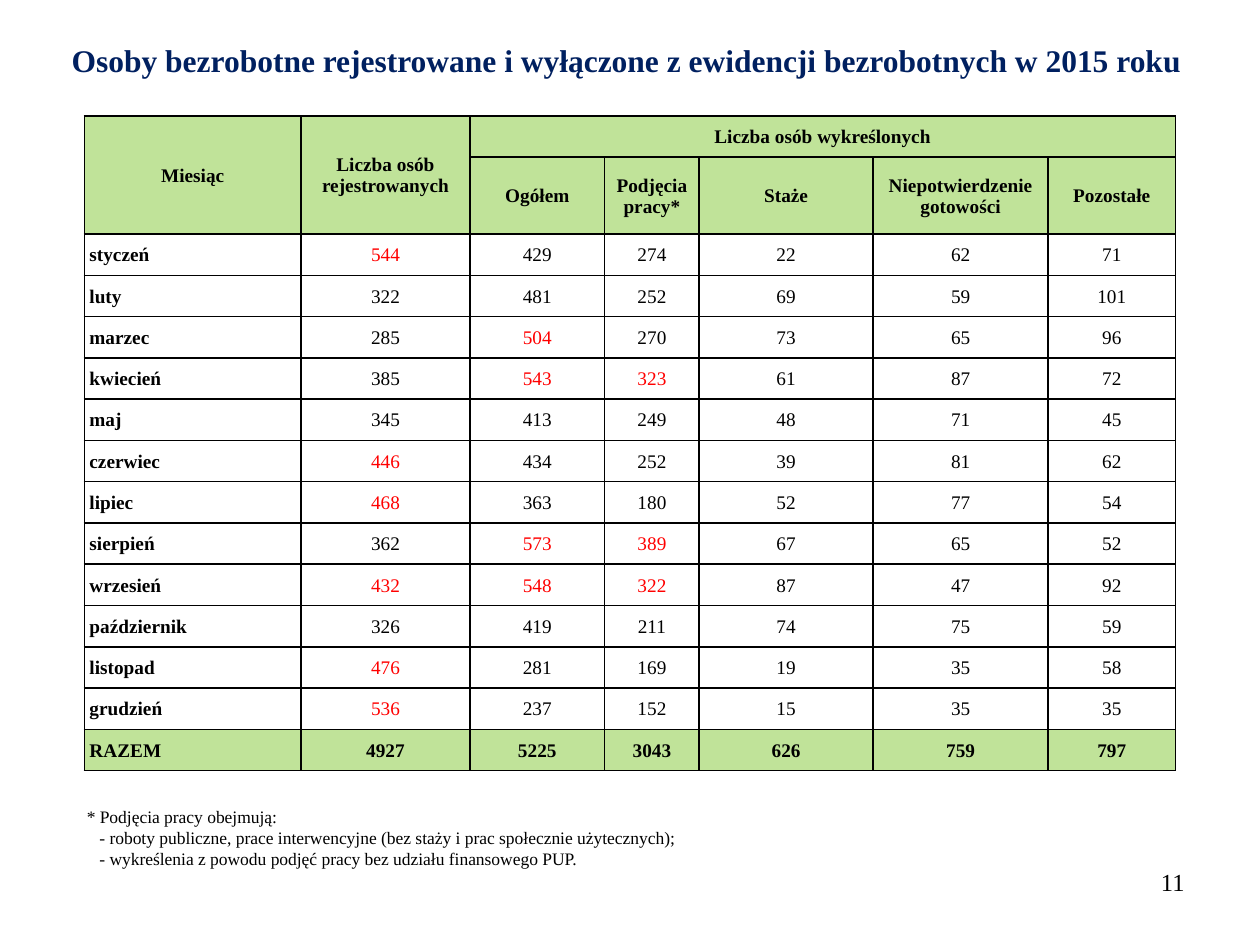
from lxml import etree
from pptx import Presentation
from pptx.dml.color import RGBColor
from pptx.enum.text import MSO_ANCHOR, PP_ALIGN
from pptx.oxml.ns import qn
from pptx.util import Inches, Pt

LEFT, CENTER, RIGHT = PP_ALIGN.LEFT, PP_ALIGN.CENTER, PP_ALIGN.RIGHT
MIDDLE = MSO_ANCHOR.MIDDLE
NAVY = RGBColor(0x00, 0x20, 0x60)
BLACK = RGBColor(0x00, 0x00, 0x00)
RED = RGBColor(0xFF, 0x00, 0x00)
GREEN = RGBColor(0xC0, 0xE3, 0x99)

GROUP_HEADER = ["Miesiąc", "Liczba osób rejestrowanych", "Liczba osób wykreślonych", "", "", "", ""]
REASON_HEADER = ["", "", "Ogółem", "Podjęcia pracy*", "Staże", "Niepotwierdzenie gotowości", "Pozostałe"]
MONTHS = [
    ["styczeń", 544, 429, 274, 22, 62, 71],
    ["luty", 322, 481, 252, 69, 59, 101],
    ["marzec", 285, 504, 270, 73, 65, 96],
    ["kwiecień", 385, 543, 323, 61, 87, 72],
    ["maj", 345, 413, 249, 48, 71, 45],
    ["czerwiec", 446, 434, 252, 39, 81, 62],
    ["lipiec", 468, 363, 180, 52, 77, 54],
    ["sierpień", 362, 573, 389, 67, 65, 52],
    ["wrzesień", 432, 548, 322, 87, 47, 92],
    ["październik", 326, 419, 211, 74, 75, 59],
    ["listopad", 476, 281, 169, 19, 35, 58],
    ["grudzień", 536, 237, 152, 15, 35, 35],
]
TOTALS = ["RAZEM", 4927, 5225, 3043, 626, 759, 797]
RED_ABOVE = {1: 400, 2: 500, 3: 300}
COLUMN_WIDTHS = [1.72, 1.34, 1.07, 0.75, 1.38, 1.39, 1.01]
TABLE_HEIGHT, REASON_HEIGHT = 5.2, 0.61


class SlideBuilder:
    """Holds the slide and its typeface, and adds text and tables to it."""

    def __init__(self, slide, font="Times New Roman"):
        self.slide = slide
        self.font = font

    def add_run(self, paragraph, text, size, color=BLACK, bold=False, align=LEFT):
        paragraph.alignment = align
        run = paragraph.add_run()
        run.text = text
        run.font.name = self.font
        run.font.size = Pt(size)
        run.font.bold = bold
        run.font.color.rgb = color

    def text(self, box, lines, size, indent=0, **style):
        frame = self.slide.shapes.add_textbox(*map(Inches, box)).text_frame
        frame.word_wrap = True
        for index, line in enumerate(lines):
            paragraph = frame.add_paragraph() if index else frame.paragraphs[0]
            self.add_run(paragraph, line, size, **style)
            if index and indent:
                paragraph._p.get_or_add_pPr().set("marL", str(Inches(indent)))

    def border(self, cell):
        properties = cell._tc.get_or_add_tcPr()
        for side in ("lnL", "lnR", "lnT", "lnB"):
            line = etree.SubElement(properties, qn(f"a:{side}"), w=str(Pt(1)))
            fill = etree.SubElement(line, qn("a:solidFill"))
            etree.SubElement(fill, qn("a:srgbClr"), val=str(BLACK))

    def cell(self, cell, value, label, shaded, color):
        self.border(cell)
        cell.margin_left = Inches(0.04 if label else 0.01)
        cell.margin_right = cell.margin_top = Inches(0.01)
        cell.margin_bottom = 0
        cell.vertical_anchor = MIDDLE
        if shaded:
            cell.fill.solid()
            cell.fill.fore_color.rgb = GREEN
        else:
            cell.fill.background()
        if value != "":
            self.add_run(cell.text_frame.paragraphs[0], str(value), 11, color,
                         bold=label or shaded, align=LEFT if label else CENTER)

    def table(self, left, top, rows):
        table = self.slide.shapes.add_table(
            len(rows), len(COLUMN_WIDTHS), Inches(left), Inches(top),
            Inches(sum(COLUMN_WIDTHS)), Inches(TABLE_HEIGHT)).table
        table.first_row = table.horz_banding = False
        for column, width in zip(table.columns, COLUMN_WIDTHS):
            column.width = Inches(width)
        regular_height = (TABLE_HEIGHT - REASON_HEIGHT) / (len(rows) - 1)
        for r, values in enumerate(rows):
            table.rows[r].height = Inches(REASON_HEIGHT if r == 1 else regular_height)
            shaded = r < 2 or r == len(rows) - 1
            for c, value in enumerate(values):
                high = not shaded and c in RED_ABOVE and value > RED_ABOVE[c]
                self.cell(table.cell(r, c), value, c == 0 and r > 1, shaded,
                          RED if high else BLACK)
        for start, end in (((0, 0), (1, 0)), ((0, 1), (1, 1)), ((0, 2), (0, 6))):
            table.cell(*start).merge(table.cell(*end))


def main():
    presentation = Presentation()
    presentation.slide_width, presentation.slide_height = Inches(10), Inches(7.5)
    builder = SlideBuilder(presentation.slides.add_slide(presentation.slide_layouts[6]))
    builder.text(
        (0.47, 0.28, 9.45, 0.4),
        ["Osoby bezrobotne rejestrowane i wyłączone z ewidencji bezrobotnych w 2015 roku"],
        18, color=NAVY, bold=True)
    builder.text(
        (0.59, 6.35, 8.35, 0.91),
        ["* Podjęcia pracy obejmują:",
         "- roboty publiczne, prace interwencyjne (bez staży i prac społecznie użytecznych);",
         "- wykreślenia z powodu podjęć pracy bez udziału finansowego PUP."],
        10, indent=0.1)
    builder.table(0.67, 0.92, [GROUP_HEADER, REASON_HEADER, *MONTHS, TOTALS])
    builder.text((7.17, 6.83, 2.33, 0.52), ["11"], 14, align=RIGHT)
    presentation.save("out.pptx")


if __name__ == "__main__":
    main()
